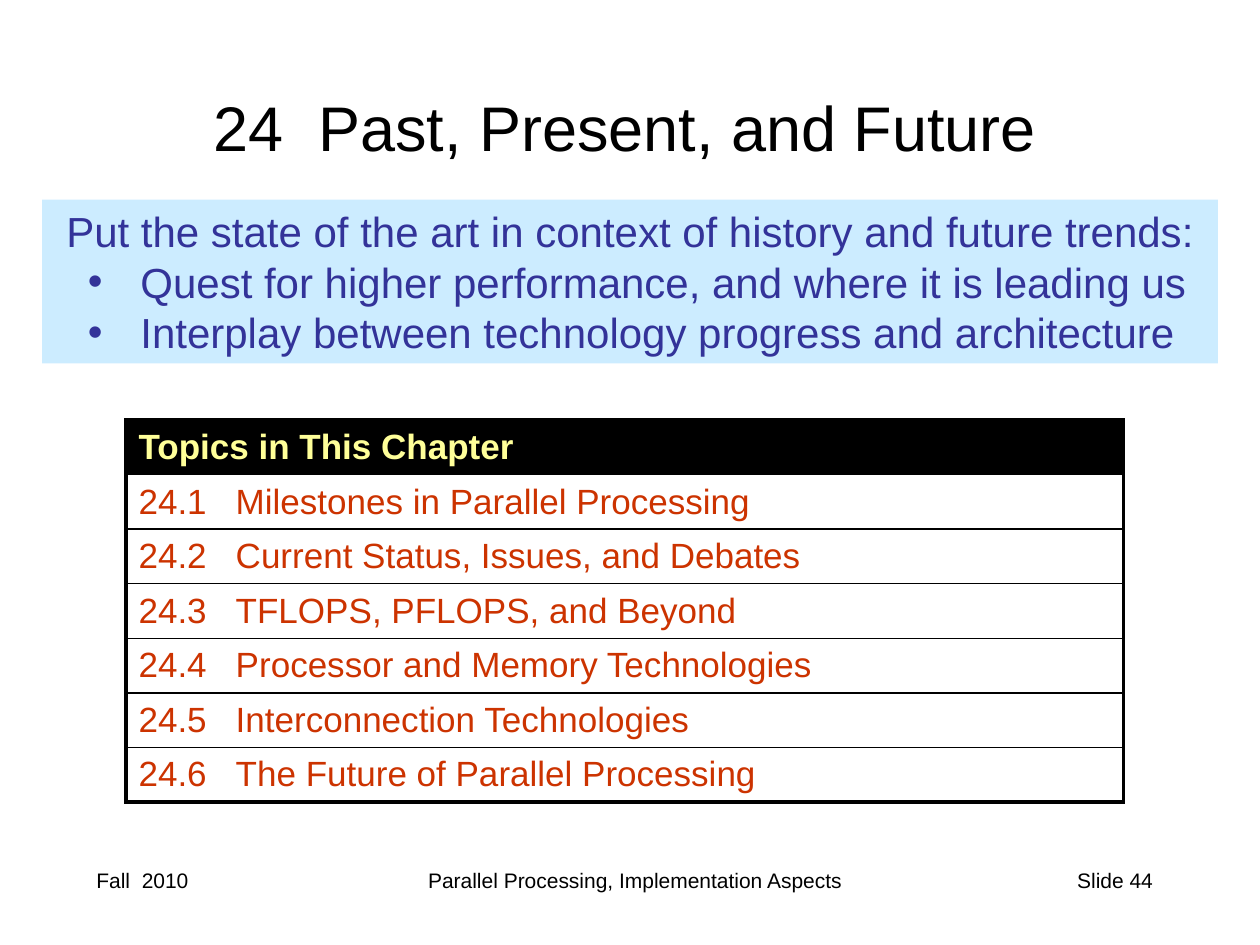
"""Build the opening slide of chapter 24, Past, Present, and Future."""
from lxml import etree
from pptx import Presentation
from pptx.dml.color import RGBColor
from pptx.enum.text import MSO_ANCHOR, MSO_AUTO_SIZE, PP_ALIGN
from pptx.oxml.ns import qn
from pptx.util import Pt

LEFT, CENTER, RIGHT = PP_ALIGN.LEFT, PP_ALIGN.CENTER, PP_ALIGN.RIGHT
TOP, MIDDLE = MSO_ANCHOR.TOP, MSO_ANCHOR.MIDDLE
NO_AUTOFIT = MSO_AUTO_SIZE.NONE

COLORS = {
    "black": "000000",
    "panel": "CCECFF",
    "indigo": "333399",
    "yellow": "FFFF99",
    "rust": "CC3300",
}
TOPICS = [
    "Milestones in Parallel Processing",
    "Current Status, Issues, and Debates",
    "TFLOPS, PFLOPS, and Beyond",
    "Processor and Memory Technologies",
    "Interconnection Technologies",
    "The Future of Parallel Processing",
]


class ChapterSlide:
    """Hold the style and the current slide."""

    font_name = "Arial"

    def __init__(self, presentation):
        self.slide = presentation.slides.add_slide(presentation.slide_layouts[1])

    def color(self, name):
        return RGBColor.from_string(COLORS[name])

    def place(self, shape, left, top, width, height):
        shape.left, shape.top = Pt(left), Pt(top)
        shape.width, shape.height = Pt(width), Pt(height)

    def run(self, paragraph, text, size, color, bold=False, spacing=0):
        run = paragraph.add_run()
        run.text = text
        run.font.size, run.font.bold = Pt(size), bold
        run.font.name = self.font_name
        run.font.color.rgb = self.color(color)
        if spacing:
            run._r.get_or_add_rPr().set("spc", str(round(spacing * 100)))

    def frame(self, shape, anchor):
        frame = shape.text_frame
        frame.auto_size, frame.word_wrap = NO_AUTOFIT, True
        frame.vertical_anchor = anchor
        return frame

    def title(self, number, text, box):
        shape = self.slide.shapes.title
        self.place(shape, *box)
        paragraph = self.frame(shape, MIDDLE).paragraphs[0]
        paragraph.alignment = CENTER
        self.run(paragraph, number, 36, "black")
        self.run(paragraph, " ", 36, "black", spacing=10)
        self.run(paragraph, text, 36, "black")

    def panel(self, lead, items, box):
        shape = self.slide.placeholders[1]
        self.place(shape, *box)
        shape.fill.solid()
        shape.fill.fore_color.rgb = self.color("panel")
        frame = self.frame(shape, TOP)
        for index, text in enumerate([lead, *items]):
            paragraph = frame.add_paragraph() if index else frame.paragraphs[0]
            paragraph.alignment, paragraph.line_spacing = LEFT, 1.0
            paragraph.space_before = Pt(0)
            properties = paragraph._p.get_or_add_pPr()
            margin, indent = (49, -30) if index else (6.7, 0)
            properties.set("marL", str(Pt(margin)))
            properties.set("indent", str(Pt(indent)))
            if index:
                etree.SubElement(properties, qn("a:buChar"), char="•")
            else:
                etree.SubElement(properties, qn("a:buNone"))
            self.run(paragraph, text, 24, "indigo")

    def footer(self, parts, left, width, alignment):
        shape = self.slide.shapes.add_textbox(Pt(left), Pt(492), Pt(width), Pt(36))
        paragraph = self.frame(shape, TOP).paragraphs[0]
        paragraph.alignment = alignment
        for text, spacing in parts:
            self.run(paragraph, text, 12, "black", spacing=spacing)

    def borders(self, cell, widths):
        properties = cell._tc.get_or_add_tcPr()
        for side, width in zip("LRTB", widths):
            line = etree.SubElement(properties, qn(f"a:ln{side}"), w=str(Pt(width)))
            fill = etree.SubElement(line, qn("a:solidFill"))
            etree.SubElement(fill, qn("a:srgbClr"), val=COLORS["black"])

    def topics(self, heading, chapter, names, left, top, width, row_height):
        count = len(names) + 1
        table = self.slide.shapes.add_table(
            count, 1, Pt(left), Pt(top), Pt(width), Pt(row_height * count)).table
        table.first_row = table.horz_banding = False
        for index, name in enumerate([heading, *names]):
            table.rows[index].height = Pt(row_height)
            cell = table.cell(index, 0)
            cell.vertical_anchor = MIDDLE
            self.borders(cell, (2.25, 2.25, 1 if index else 2.25,
                                2.25 if index == count - 1 else 1))
            paragraph = cell.text_frame.paragraphs[0]
            paragraph.alignment = LEFT
            if index:
                cell.fill.background()
                tabs = etree.SubElement(paragraph._p.get_or_add_pPr(), qn("a:tabLst"))
                etree.SubElement(tabs, qn("a:tab"), pos=str(Pt(55.5)), algn="l")
                self.run(paragraph, f"{chapter}.{index}\t{name}", 20, "rust")
            else:
                cell.fill.solid()
                cell.fill.fore_color.rgb = self.color("black")
                self.run(paragraph, name, 20, "yellow", bold=True)


def main():
    presentation = Presentation()
    presentation.slide_width, presentation.slide_height = Pt(720), Pt(540)
    chapter = ChapterSlide(presentation)
    chapter.footer([("Fall", 0), (" ", 3.3), ("2010", 0)], 48, 150, LEFT)
    chapter.footer([("Parallel Processing, Implementation Aspects", 0)],
                   174, 378, CENTER)
    chapter.footer([("Slide 44", 0)], 516, 150, RIGHT)
    chapter.title("24", "Past, Present, and Future", (24, 36, 666, 72))
    chapter.panel(
        "Put the state of the art in context of history and future trends:",
        ["Quest for higher performance, and where it is leading us",
         "Interplay between technology progress and architecture"],
        (24, 114, 672, 93.6))
    chapter.topics("Topics in This Chapter", 24, TOPICS, 72, 240, 570, 31.2)
    presentation.save("out.pptx")


if __name__ == "__main__":
    main()
